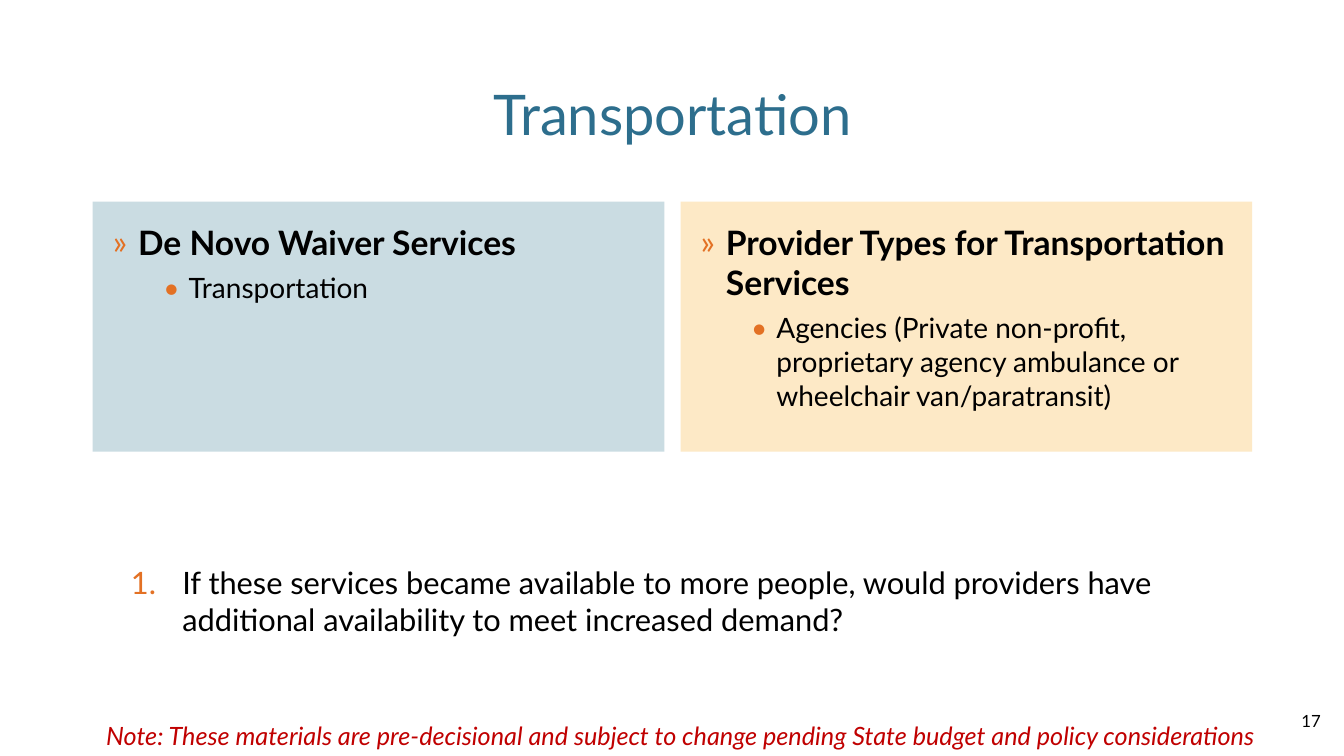
"""Build the Transportation waiver services slide."""
from dataclasses import dataclass

from lxml import etree
from pptx import Presentation
from pptx.dml.color import RGBColor
from pptx.enum.shapes import MSO_SHAPE
from pptx.enum.text import MSO_ANCHOR, PP_ALIGN
from pptx.oxml.ns import qn
from pptx.util import Inches, Pt


@dataclass(frozen=True)
class Theme:
    font: str = "Lato"
    title: str = "2D6E8D"
    text: str = "000000"
    bullet: str = "E37124"
    note: str = "C00000"
    services_fill: str = "CADCE2"
    providers_fill: str = "FDE9C6"
    title_size: int = 40
    heading_size: int = 24
    question_size: int = 22
    item_size: int = 20
    note_size: int = 18
    number_size: int = 12


theme = Theme()


def style(p, size, color=theme.text, bold=False, italic=False):
    for r in p.runs:
        r.font.name = theme.font
        r.font.size = Pt(size)
        r.font.bold = bold
        r.font.italic = italic
        r.font.color.rgb = RGBColor.from_string(color)


def add_bullet(p, left, hang, tag, **attrs):
    pPr = p._p.get_or_add_pPr()
    pPr.set("marL", str(Inches(left)))
    pPr.set("indent", str(-Inches(hang)))
    buClr = etree.SubElement(pPr, qn("a:buClr"))
    etree.SubElement(buClr, qn("a:srgbClr"), val=theme.bullet)
    etree.SubElement(pPr, qn("a:buFont"), typeface=theme.font)
    etree.SubElement(pPr, qn(tag), **attrs)


prs = Presentation()
prs.slide_width = Inches(13.33)
prs.slide_height = Inches(7.5)
s = prs.slides.add_slide(prs.slide_layouts[6])

panels = [
    (0.92, theme.services_fill, "De Novo Waiver Services", "Transportation"),
    (6.75, theme.providers_fill, "Provider Types for Transportation Services",
     "Agencies (Private non-profit, proprietary agency ambulance or wheelchair van/paratransit)"),
]
for left, fill, heading, item in panels:
    sp = s.shapes.add_shape(MSO_SHAPE.RECTANGLE, Inches(left), Inches(2), Inches(5.67), Inches(2.48))
    sp.shadow.inherit = False
    sp.fill.solid()
    sp.fill.fore_color.rgb = RGBColor.from_string(fill)
    sp.line.fill.background()
    tf = sp.text_frame
    tf.word_wrap = True
    tf.vertical_anchor = MSO_ANCHOR.TOP
    tf.margin_left = tf.margin_right = tf.margin_top = Inches(0.2)
    tf.margin_bottom = Inches(0.05)
    tf.text = f"{heading}\n{item}"
    for p in tf.paragraphs:
        p.alignment = PP_ALIGN.LEFT
        p.space_after = Pt(6)
    title_p, item_p = tf.paragraphs
    item_p.level = 1
    add_bullet(title_p, 0.25, 0.25, "a:buChar", char="»")
    add_bullet(item_p, 0.75, 0.25, "a:buChar", char="•")
    style(title_p, theme.heading_size, bold=True)
    style(item_p, theme.item_size)

texts = [
    ("Transportation", (0.92, 0.4, 11.5, 1.45), MSO_ANCHOR.MIDDLE, PP_ALIGN.CENTER,
     theme.title_size, theme.title),
    ("If these services became available to more people, would providers have "
     "additional availability to meet increased demand?",
     (0.97, 4.97, 11.56, 1.98), MSO_ANCHOR.MIDDLE, PP_ALIGN.LEFT, theme.question_size, theme.text),
    ("Note: These materials are pre-decisional and subject to change pending "
     "State budget and policy considerations",
     (0.22, 7.1, 13.06, 0.28), MSO_ANCHOR.TOP, PP_ALIGN.CENTER, theme.note_size, theme.note),
    ("17", (10.2, 6.95, 3, 0.4), MSO_ANCHOR.MIDDLE, PP_ALIGN.RIGHT, theme.number_size, theme.text),
]
for text, box, anchor, align, size, color in texts:
    tf = s.shapes.add_textbox(*map(Inches, box)).text_frame
    tf.word_wrap = True
    tf.vertical_anchor = anchor
    tf.text = text
    p = tf.paragraphs[0]
    p.alignment = align
    if size == theme.question_size:
        add_bullet(p, 0.74, 0.51, "a:buAutoNum", type="arabicPeriod")
    style(p, size, color, italic=color == theme.note)

prs.save("out.pptx")
